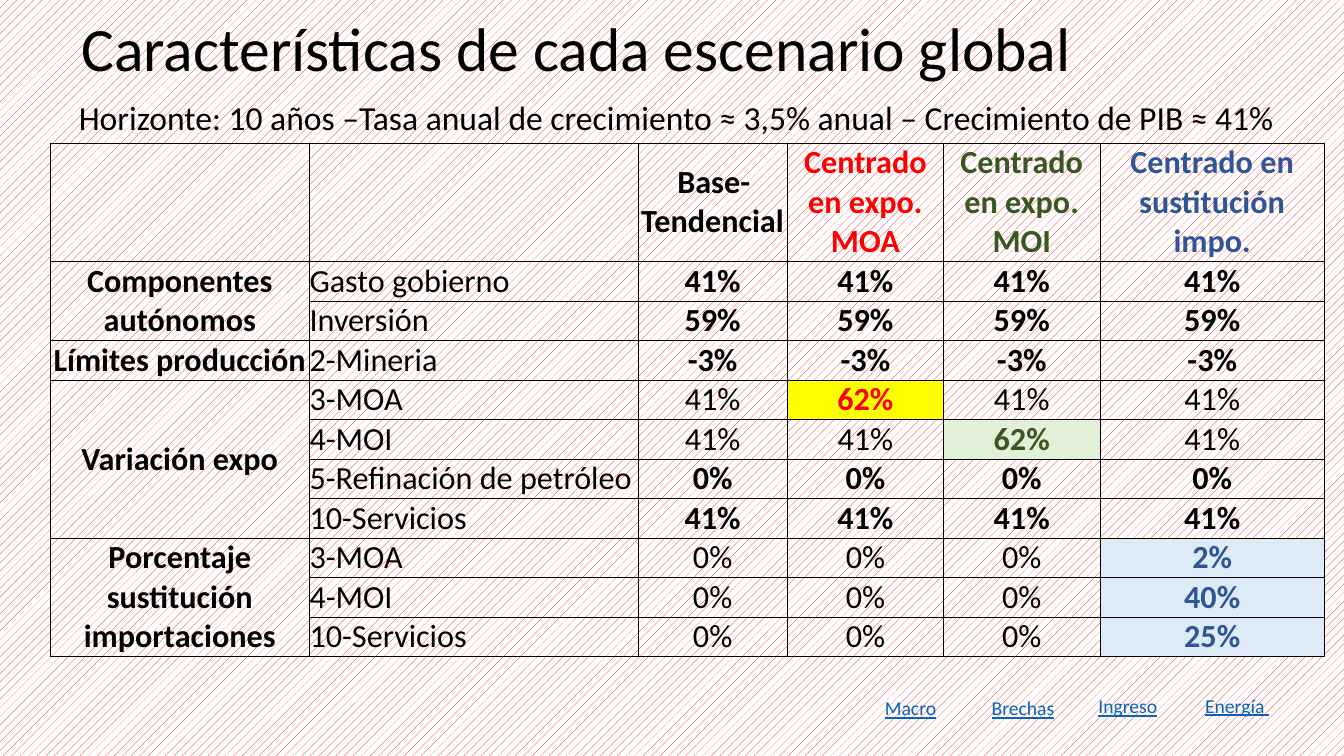
"""Build the slide that compares the global scenarios."""
from lxml.etree import SubElement
from pptx import Presentation
from pptx.dml.color import RGBColor
from pptx.enum.dml import MSO_PATTERN
from pptx.enum.text import MSO_ANCHOR, MSO_AUTO_SIZE, PP_ALIGN
from pptx.oxml.ns import qn
from pptx.util import Cm, Pt

BLACK, RED, GREEN, BLUE, LINK = "000000", "FF0000", "385723", "2F5597", "0563C1"
YELLOW, PALE_GREEN, PALE_BLUE = "FFFF00", "E2F0D9", "DEEBF7"

WIDTHS = [6.53, 8.28, 3.76, 3.94, 3.94, 5.66]
HEADS = [("Base-Tendencial", BLACK), ("Centrado en expo. MOA", RED),
         ("Centrado en expo. MOI", GREEN), ("Centrado en sustitución impo.", BLUE)]
GROUPS = [("Componentes autónomos", 2), ("Límites producción", 1),
          ("Variación expo", 4), ("Porcentaje sustitución importaciones", 3)]
ROWS = [("Gasto gobierno", "41%", True), ("Inversión", "59%", True),
        ("2-Mineria", "-3%", True), ("3-MOA", "41%", False),
        ("4-MOI", "41%", False), ("5-Refinación de petróleo", "0%", True),
        ("10-Servicios", "41%", True), ("3-MOA", "0%", False),
        ("4-MOI", "0%", False), ("10-Servicios", "0%", False)]
MARKS = {(4, 3): ("62%", RED, YELLOW), (5, 4): ("62%", GREEN, PALE_GREEN),
         (8, 5): ("2%", BLUE, PALE_BLUE), (9, 5): ("40%", BLUE, PALE_BLUE),
         (10, 5): ("25%", BLUE, PALE_BLUE)}
LINKS = [("Macro", 17.42), ("Brechas", 17.42), ("Ingreso", 17.37), ("Energía ", 17.35)]


def paint(code):
    return RGBColor.from_string(code)


class Board:
    def __init__(self, slide, font):
        self.slide, self.font = slide, font

    def back(self, front, rear):
        fill = self.slide.background.fill
        fill.patterned()
        fill.pattern = MSO_PATTERN.PERCENT_20
        fill.fore_color.rgb, fill.back_color.rgb = paint(front), paint(rear)

    def style(self, frame, size, color, bold=False, under=None, align=PP_ALIGN.LEFT):
        for para in frame.paragraphs:
            para.alignment = align
            for run in para.runs:
                font = run.font
                font.name, font.size, font.bold = self.font, Pt(size), bold
                font.color.rgb, font.underline = paint(color), under

    def text(self, words, left, top, width, height, size, color=BLACK, **looks):
        frame = self.slide.shapes.add_textbox(
            Cm(left), Cm(top), Cm(width), Cm(height)).text_frame
        frame.text, frame.word_wrap = words, True
        frame.auto_size = MSO_AUTO_SIZE.SHAPE_TO_FIT_TEXT
        self.style(frame, size, color, **looks)
        return frame

    def title(self, words, left, top, width, height, size):
        frame = self.text(words, left, top, width, height, size)
        frame.auto_size = MSO_AUTO_SIZE.NONE
        frame.vertical_anchor = MSO_ANCHOR.MIDDLE
        frame.paragraphs[0].line_spacing = 0.9

    def grid(self, left, top, height, widths, heights):
        shape = self.slide.shapes.add_table(
            len(heights), len(widths), Cm(left), Cm(top), Cm(sum(widths)), Cm(height))
        table = shape.table
        table.first_row = table.horz_banding = False
        for col, width in zip(table.columns, widths):
            col.width = Cm(width)
        for row, high in zip(table.rows, heights):
            row.height = Cm(high)
        shape.height = Cm(height)
        for cell in table.iter_cells():
            self.edge(cell)
            cell.fill.background()
        return table

    def edge(self, cell):
        props = cell._tc.get_or_add_tcPr()
        for side in "LRTB":
            line = SubElement(props, qn(f"a:ln{side}"), w=str(Pt(0.5)))
            SubElement(SubElement(line, qn("a:solidFill")), qn("a:srgbClr"), val=BLACK)

    def cell(self, cell, words, color=BLACK, bold=True, fill=None,
             anchor=MSO_ANCHOR.BOTTOM, align=PP_ALIGN.CENTER):
        cell.text_frame.text = words
        cell.margin_left = cell.margin_right = cell.margin_top = cell.margin_bottom = 0
        cell.vertical_anchor = anchor
        if fill:
            cell.fill.solid()
            cell.fill.fore_color.rgb = paint(fill)
        self.style(cell.text_frame, 23, color, bold, align=align)


def main():
    deck = Presentation()
    deck.slide_width, deck.slide_height = Cm(33.87), Cm(19.05)
    board = Board(deck.slides.add_slide(deck.slide_layouts[6]), "Calibri")
    board.back(RED, "FFFFFF")
    board.title("Características de cada escenario global", 1.8, 0.28, 30.5, 2.03, 44)

    table = board.grid(1.27, 3.6, 12.65, WIDTHS, [2.69] + [0.71] * len(ROWS))
    for col, (head, color) in enumerate(HEADS, 2):
        board.cell(table.cell(0, col), head, color, anchor=MSO_ANCHOR.MIDDLE)
    top = 1
    for group, span in GROUPS:
        first = table.cell(top, 0)
        if span > 1:
            first.merge(table.cell(top + span - 1, 0))
        board.cell(first, group, anchor=MSO_ANCHOR.MIDDLE)
        top += span
    for row, (label, value, bold) in enumerate(ROWS, 1):
        board.cell(table.cell(row, 1), label, bold=False, align=PP_ALIGN.LEFT)
        for col in range(2, len(WIDTHS)):
            words, color, fill = MARKS.get((row, col), (value, BLACK, None))
            board.cell(table.cell(row, col), words, color, bold or fill is not None, fill)

    board.text("Horizonte: 10 años –Tasa anual de crecimiento ≈ 3,5% anual "
               "– Crecimiento de PIB ≈ 41%", 1.27, 2.31, 31.55, 1.27, 24,
               align=PP_ALIGN.CENTER)
    for step, (name, high) in enumerate(LINKS):
        board.text(name, 22.05 + 2.69 * step, high, 2.69, 0.86, 14, LINK, under=True)
    deck.save("out.pptx")


if __name__ == "__main__":
    main()
